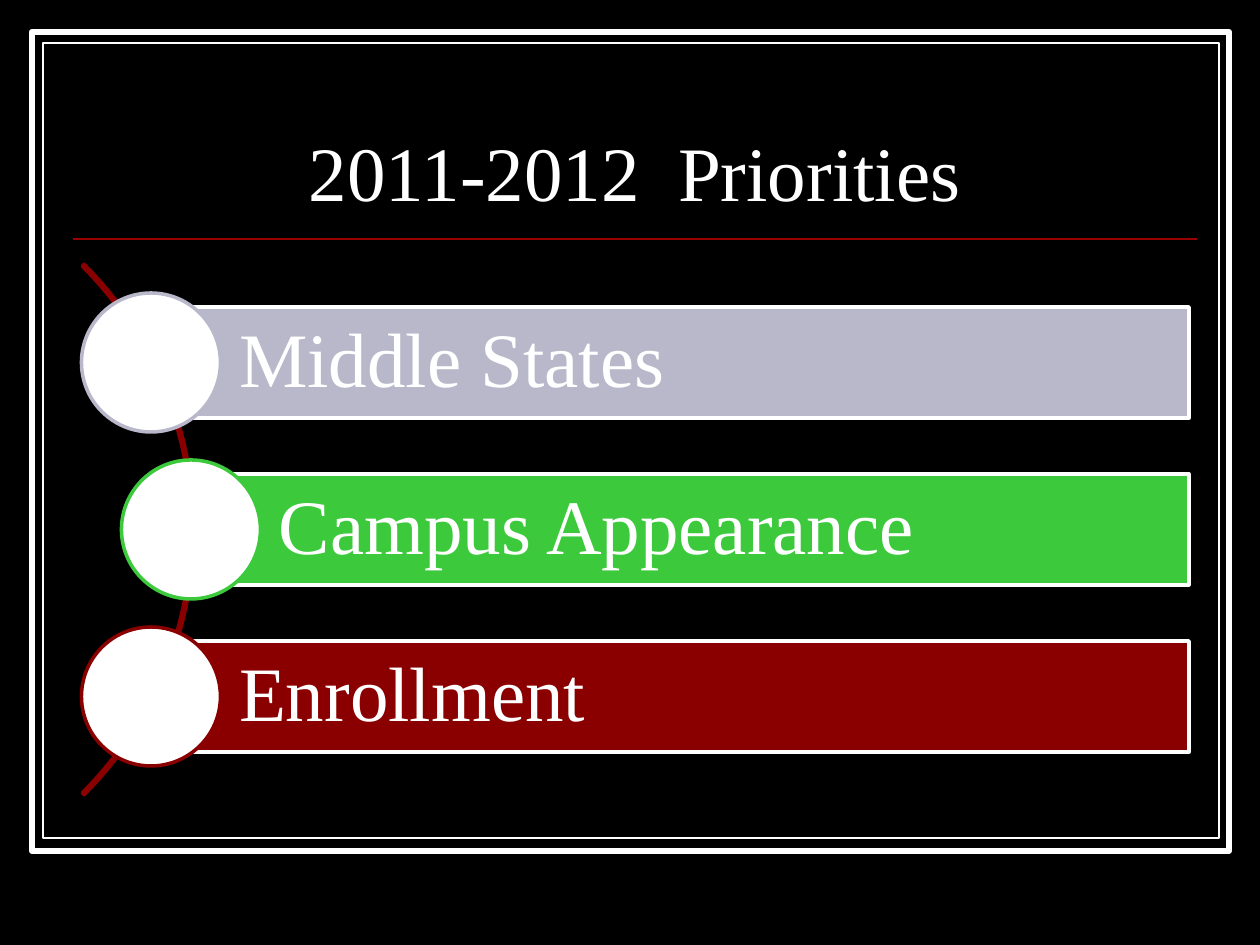
from pptx import Presentation
from pptx.dml.color import RGBColor
from pptx.enum.shapes import MSO_CONNECTOR, MSO_SHAPE
from pptx.enum.text import MSO_ANCHOR, PP_ALIGN
from pptx.oxml.ns import qn
from pptx.util import Pt
from lxml import etree

BLACK = RGBColor(0x00, 0x00, 0x00)
WHITE = RGBColor(0xFF, 0xFF, 0xFF)
RULE_RED = RGBColor(0x99, 0x00, 0x00)
DARK_RED = RGBColor(0x8A, 0x00, 0x00)
LAVENDER = RGBColor(0xB8, 0xB8, 0xCA)
GREEN = RGBColor(0x3C, 0xCA, 0x3C)

RECT, OVAL, ARC = MSO_SHAPE.RECTANGLE, MSO_SHAPE.OVAL, MSO_SHAPE.BLOCK_ARC
STRAIGHT = MSO_CONNECTOR.STRAIGHT
MIDDLE, BOTTOM = MSO_ANCHOR.MIDDLE, MSO_ANCHOR.BOTTOM
LEFT, CENTER = PP_ALIGN.LEFT, PP_ALIGN.CENTER

FONT = "Times New Roman"
FONT_SIZE = 44

# Content: label, colour, indent in px along the arc
TITLE = "2011-2012  Priorities"
PRIORITIES = [
    ("Middle States", LAVENDER, 0),
    ("Campus Appearance", GREEN, 40),
    ("Enrollment", DARK_RED, 0),
]

# Frames: left, top, width, height in px, line width in points
FRAMES = [
    (32, 32, 1197, 819, 3.5),
    (43, 43, 1176, 795, 0.75),
]

# Layout of the priority list, in px
BAR_LEFT, BAR_RIGHT, BAR_TOP = 151, 1189, 307
BAR_HEIGHT, BAR_PITCH = 111, 167
CIRCLE = 139
ARC_LEFT, ARC_SIZE = -556, 750


def px(length):
    return round(length * 914400 / 126)


def add_shape(page, kind, left, top, width, height, fill, line, points):
    shape = page.shapes.add_shape(kind, px(left), px(top), px(width), px(height))
    shape.shadow.inherit = False
    shape.fill.solid()
    shape.fill.fore_color.rgb = fill
    shape.line.color.rgb = line
    shape.line.width = Pt(points)
    return shape


def write(box, text, anchor, align, spacing):
    frame = box.text_frame
    frame.word_wrap = True
    frame.vertical_anchor = anchor
    frame.text = text
    para = frame.paragraphs[0]
    para.alignment = align
    para.line_spacing = spacing
    font = para.runs[0].font
    font.name = FONT
    font.size = Pt(FONT_SIZE)
    font.color.rgb = WHITE
    return frame


def main():
    deck = Presentation()
    deck.slide_width, deck.slide_height = px(1260), px(945)
    page = deck.slides.add_slide(deck.slide_layouts[6])
    page.background.fill.solid()
    page.background.fill.fore_color.rgb = BLACK

    # Double frame
    for left, top, width, height, points in FRAMES:
        add_shape(page, RECT, left, top, width, height, BLACK, WHITE, points)

    # Title and the rule below it
    rule = page.shapes.add_connector(STRAIGHT, px(73), px(239), px(1197), px(239))
    rule.line.color.rgb = RULE_RED
    rule.line.width = Pt(1)
    etree.SubElement(rule._element.spPr, qn("a:effectLst"))
    title = page.shapes.add_textbox(px(73), px(66), px(1124), px(157))
    write(title, TITLE, BOTTOM, CENTER, 0.8)

    # Arc, centred on the list of bars
    list_height = BAR_PITCH * (len(PRIORITIES) - 1) + BAR_HEIGHT
    arc_top = BAR_TOP + (list_height - ARC_SIZE) / 2
    arc = add_shape(page, ARC, ARC_LEFT, arc_top, ARC_SIZE, ARC_SIZE,
                    DARK_RED, DARK_RED, 2)
    for index, value in enumerate((189, 27, 0.0036)):
        arc.adjustments[index] = value

    # Bars, each with a circle centred on its left edge
    for index, (label, color, indent) in enumerate(PRIORITIES):
        left = BAR_LEFT + indent
        top = BAR_TOP + index * BAR_PITCH
        bar = add_shape(page, RECT, left, top, BAR_RIGHT - left, BAR_HEIGHT,
                        color, WHITE, 2)
        frame = write(bar, label, MIDDLE, LEFT, 0.9)
        frame.margin_left = px(88)
        frame.margin_top = frame.margin_right = frame.margin_bottom = px(15)
        add_shape(page, OVAL, left - CIRCLE / 2, top + (BAR_HEIGHT - CIRCLE) / 2,
                  CIRCLE, CIRCLE, WHITE, color, 2)

    deck.save("out.pptx")


if __name__ == "__main__":
    main()
